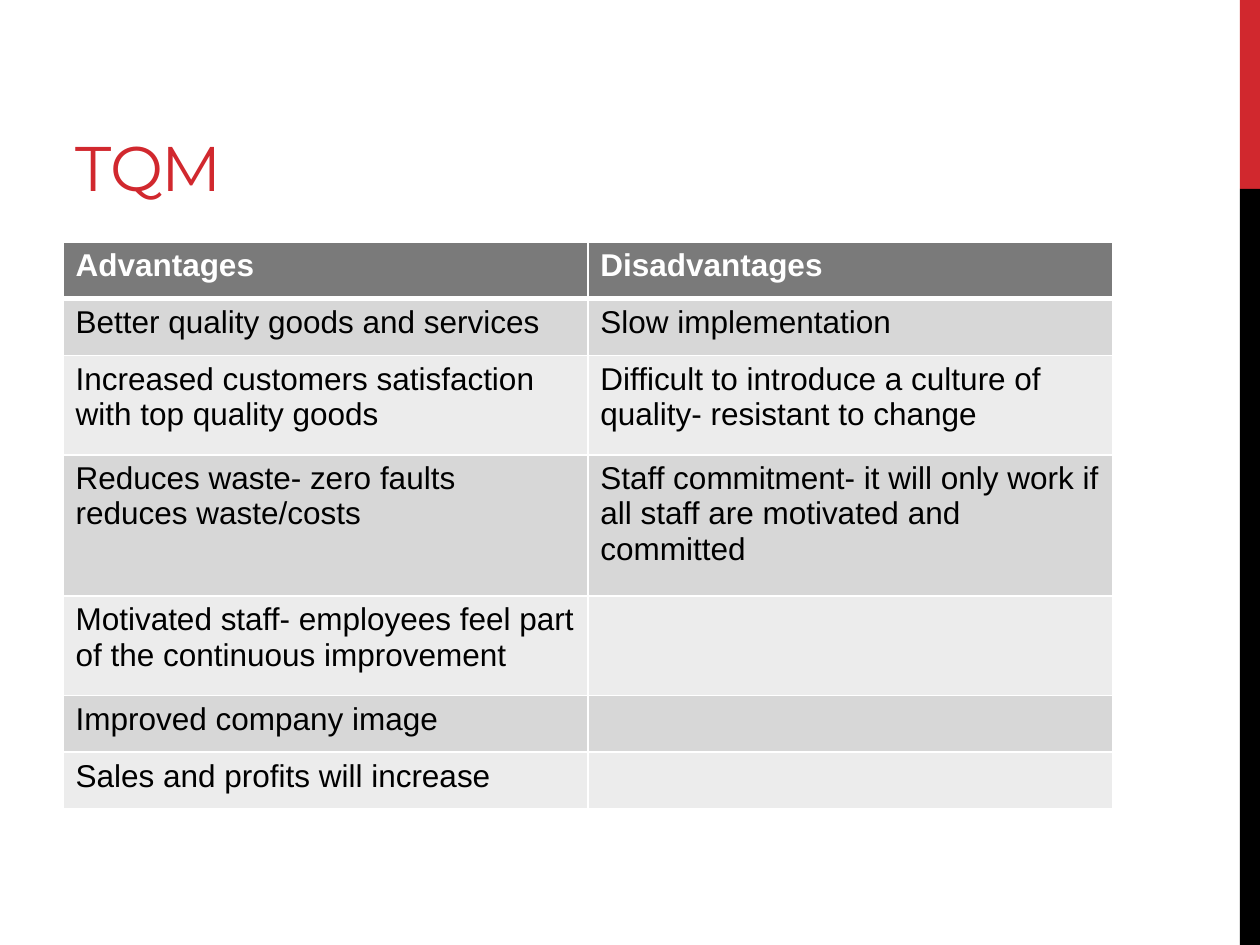
"""Build the TQM slide comparing advantages and disadvantages in a table."""
import pptx
import pptx.dml.color
import pptx.enum.shapes
import pptx.enum.text
import pptx.oxml
import pptx.oxml.ns
import pptx.util

Inches, Pt = pptx.util.Inches, pptx.util.Pt
RGBColor = pptx.dml.color.RGBColor

COLORS = {
    "red": "D1282E",
    "black": "000000",
    "white": "FFFFFF",
    "header": "7A7A7A",
    "odd": "D7D7D7",
    "even": "ECECEC",
}
ROWS = [
    (0.45, "Advantages", "Disadvantages"),
    (0.45, "Better quality goods and services", "Slow implementation"),
    (0.79, "Increased customers satisfaction with top quality goods",
     "Difficult to introduce a culture of quality- resistant to change"),
    (1.12, "Reduces waste- zero faults reduces waste/costs",
     "Staff commitment- it will only work if all staff are motivated and committed"),
    (0.79, "Motivated staff- employees feel part of the continuous improvement", ""),
    (0.45, "Improved company image", ""),
    (0.45, "Sales and profits will increase", ""),
]


def write(para, text, color, **formats):
    span = para.add_run()
    span.text = text
    for name, value in formats.items():
        setattr(span.font, name, value)
    span.font.color.rgb = RGBColor.from_string(COLORS[color])
    return span


def add_border(cell, side, points):
    cell._tc.get_or_add_tcPr().append(pptx.oxml.parse_xml(
        f'<a:{side} {pptx.oxml.ns.nsdecls("a")} w="{Pt(points)}"><a:solidFill>'
        f'<a:srgbClr val="{COLORS["white"]}"/></a:solidFill></a:{side}>'))


deck = pptx.Presentation()
deck.slide_width, deck.slide_height = Inches(10), Inches(7.5)
page = deck.slides.add_slide(deck.slide_layouts[5])

for color, top, height in (("red", 0, 1.5), ("black", 1.5, 6)):
    bar = page.shapes.add_shape(
        pptx.enum.shapes.MSO_SHAPE.RECTANGLE,
        Inches(9.84), Inches(top), Inches(0.16), Inches(height))
    bar.shadow.inherit = False
    bar.fill.solid()
    bar.fill.fore_color.rgb = RGBColor.from_string(COLORS[color])
    bar.line.fill.background()

title = page.shapes.title
title_place = {"left": 0.5, "top": 0.17, "width": 6.33, "height": 1.5}
for name, value in title_place.items():
    setattr(title, name, Inches(value))
title.text_frame.auto_size = pptx.enum.text.MSO_AUTO_SIZE.NONE
title.text_frame.vertical_anchor = pptx.enum.text.MSO_ANCHOR.BOTTOM
heading = title.text_frame.paragraphs[0]
heading.alignment = pptx.enum.text.PP_ALIGN.LEFT
span = write(heading, "TQM", "red", name="Montserrat", size=Pt(36))
span.font._element.set("spc", "-60")

table = page.shapes.add_table(
    len(ROWS), 2, Inches(0.5), Inches(1.92), Inches(8.33), Inches(4.5)).table
for row_index, (height, *texts) in enumerate(ROWS):
    is_header = row_index == 0
    fill = "header" if is_header else "odd" if row_index % 2 else "even"
    table.rows[row_index].height = Inches(height)
    for column_index, text in enumerate(texts):
        cell = table.cell(row_index, column_index)
        borders = {"lnL": 1, "lnR": 1, "lnT": 3 if row_index == 1 else 1,
                   "lnB": 3 if is_header else 1}
        for side, points in borders.items():
            add_border(cell, side, points)
        cell.fill.solid()
        cell.fill.fore_color.rgb = RGBColor.from_string(COLORS[fill])
        if text:
            write(cell.text_frame.paragraphs[0], text,
                  "white" if is_header else "black",
                  name="Arial", size=Pt(18), bold=is_header)

deck.save("out.pptx")
